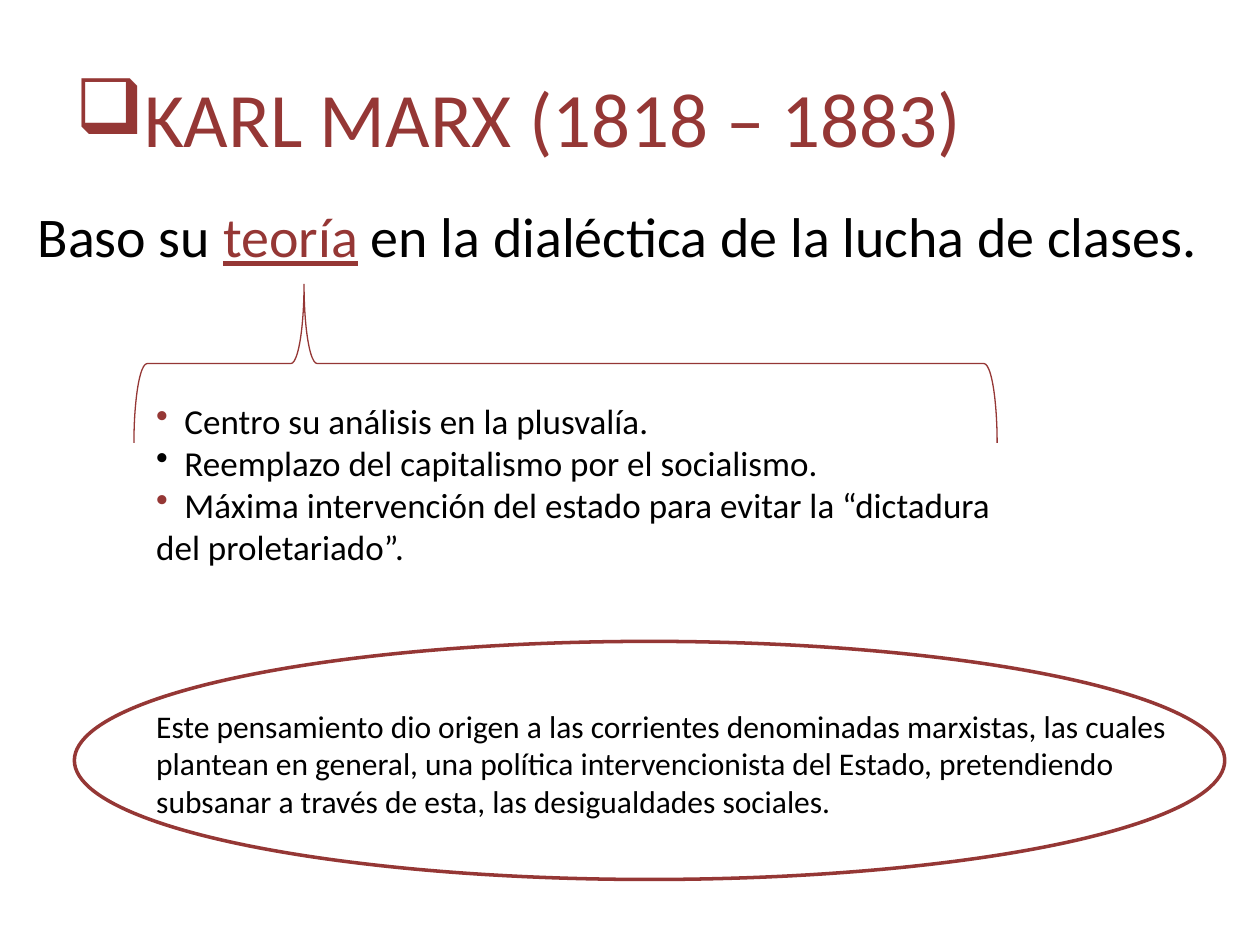
import pptx
import pptx.util
import pptx.dml.color
import pptx.enum.shapes
import pptx.enum.text
import pptx.oxml.ns
import lxml.etree

Cm, Pt = pptx.util.Cm, pptx.util.Pt
SHAPE = pptx.enum.shapes.MSO_SHAPE
COLORS = {"wine": "953735", "black": "000000"}


def rgb(name):
    return pptx.dml.color.RGBColor.from_string(COLORS[name])


def add_text(s, box, size):
    tf = s.shapes.add_textbox(*map(Cm, box)).text_frame
    tf.word_wrap = True
    set_font(tf.paragraphs[0], size)
    return tf


def set_font(p, size, color="black"):
    p.font.name = "Calibri"
    p.font.size = Pt(size)
    p.font.color.rgb = rgb(color)


def add_bullet(p, char, color):
    pPr = p._p.get_or_add_pPr()
    qn = pptx.oxml.ns.qn
    buClr = lxml.etree.Element(qn("a:buClr"))
    lxml.etree.SubElement(buClr, qn("a:srgbClr"), val=COLORS[color])
    buChar = lxml.etree.Element(qn("a:buChar"), char=char)
    pPr.insert(0, buClr)
    pPr.insert(1, buChar)


def add_outline(s, kind, box, width):
    sp = s.shapes.add_shape(kind, *map(Cm, box))
    sp.shadow.inherit = False
    sp.fill.background()
    sp.line.color.rgb = rgb("wine")
    sp.line.width = Pt(width)
    return sp


def add_title(s, box):
    tf = add_text(s, box, 44)
    tf.vertical_anchor = pptx.enum.text.MSO_ANCHOR.MIDDLE
    p = tf.paragraphs[0]
    p.text = "KARL MARX (1818 – 1883)"
    set_font(p, 44, "wine")
    add_bullet(p, "❑", "wine")


def add_thesis(s, box):
    p = add_text(s, box, 32).paragraphs[0]
    p.space_before = Pt(6.4)
    for text in ("Baso su ", "teoría", " en la dialéctica de la lucha de clases."):
        r = p.add_run()
        r.text = text
        if text == "teoría":
            r.font.underline = True
            r.font.color.rgb = rgb("wine")


def add_brace(s, left, top, width, height):
    shift = (width - height) / 2
    box = (left + shift, top - shift, height, width)
    sp = add_outline(s, SHAPE.LEFT_BRACE, box, 0.75)
    sp.rotation = 90
    sp.adjustments[0] = 0.083
    sp.adjustments[1] = 0.803


def add_ideas(s, box):
    tf = add_text(s, box, 20)
    ideas = [
        ("Centro su análisis en la plusvalía.", "wine"),
        ("Reemplazo del capitalismo por el socialismo.", "black"),
        ("Máxima intervención del estado para evitar la “dictadura del proletariado”.", "wine"),
    ]
    for i, (text, color) in enumerate(ideas):
        p = tf.add_paragraph() if i else tf.paragraphs[0]
        p.text = "  " + text
        set_font(p, 20)
        add_bullet(p, "•", color)


def add_conclusion(s, left, top, width, height):
    box = (left + 1.4, top + 1.19, width - 1.99, 2.57)
    p = add_text(s, box, 18).paragraphs[0]
    p.text = (
        "Este pensamiento dio origen a las corrientes denominadas marxistas, "
        "las cuales plantean en general, una política intervencionista del Estado, "
        "pretendiendo subsanar a través de esta, las desigualdades sociales."
    )
    add_outline(s, SHAPE.OVAL, (left, top, width, height), 2)


def main():
    prs = pptx.Presentation()
    prs.slide_width, prs.slide_height = Cm(25.4), Cm(19.05)
    s = prs.slides.add_slide(prs.slide_layouts[6])
    add_title(s, (1.27, 0.76, 22.86, 3.18))
    add_thesis(s, (0.51, 3.94, 24.41, 2.79))
    add_brace(s, 2.7, 5.73, 17.4, 3.2)
    add_ideas(s, (2.9, 7.92, 17.6, 5.2))
    add_conclusion(s, 1.5, 12.93, 23.19, 4.8)
    prs.save("out.pptx")


if __name__ == "__main__":
    main()
